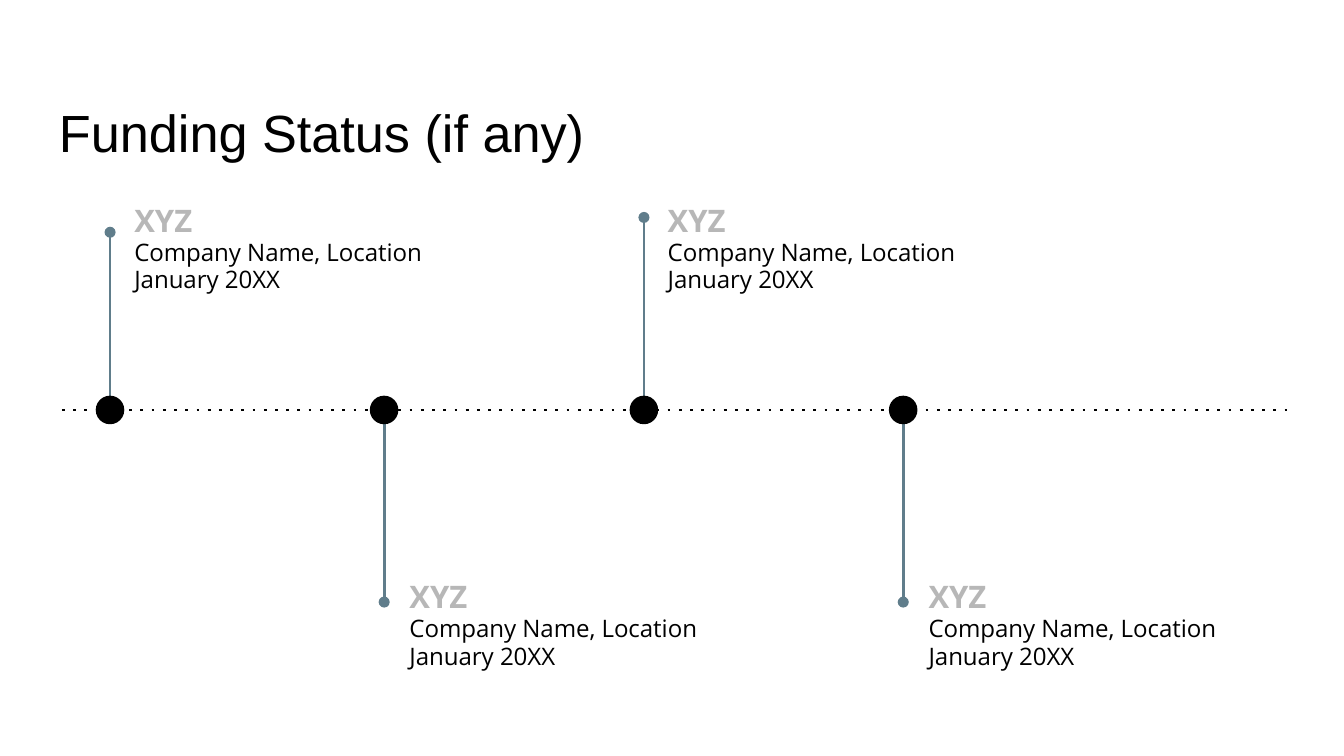
"""Build a funding status slide with milestones along a dotted timeline."""
from lxml import etree
from pptx import Presentation
from pptx import util as u
from pptx.dml.color import RGBColor
from pptx.enum import shapes, text
from pptx.oxml import ns


def paint(color_format, hex_color):
    color_format.rgb = RGBColor.from_string(hex_color)


def draw_line(x1, y1, x2, y2, hex_color, ending, **settings):
    line = slide.shapes.add_connector(
        shapes.MSO_CONNECTOR.STRAIGHT, u.Cm(x1), u.Cm(y1), u.Cm(x2), u.Cm(y2))
    line.line.width = u.Pt(1.5)
    paint(line.line.color, hex_color)
    properties = line._element.spPr
    etree.SubElement(properties.find(ns.qn("a:ln")), ns.qn(ending), **settings)
    etree.SubElement(properties, ns.qn("a:effectLst"))


deck = Presentation()
deck.slide_width, deck.slide_height = u.Cm(25.4), u.Cm(14.29)
slide = deck.slides.add_slide(deck.slide_layouts[5])

heading = slide.shapes.title
heading.left, heading.top = u.Cm(0.86), u.Cm(0.89)
heading.width, heading.height = u.Cm(12.19), u.Cm(2.31)
heading.text_frame.text = "Funding Status (if any)"
heading.text_frame.vertical_anchor = text.MSO_ANCHOR.BOTTOM
heading_line = heading.text_frame.paragraphs[0]
heading_line.alignment = text.PP_ALIGN.LEFT
heading_font = heading_line.runs[0].font
heading_font.name, heading_font.size = "Arial", u.Pt(28)
paint(heading_font.color, "000000")

axis_y = 7.75
dot_size = 0.54
draw_line(1.17, axis_y, 24.33, axis_y, "000000", "a:prstDash", val="dot")

milestones = [
    (2.08, 4.39, 2.29, 3.61),
    (7.26, 11.38, 7.49, 10.72),
    (12.17, 4.11, 12.37, 3.61),
    (17.07, 11.38, 17.3, 10.72),
]
details = [
    ("XYZ", 16.6, "B7B7B7", True, 0),
    ("Company Name, Location", 12.9, "000000", False, 0),
    ("January 20XX", 12.9, "000000", False, 12),
]

for x, stem_end, label_left, label_top in milestones:
    draw_line(x, axis_y, x, stem_end, "607D8B", "a:tailEnd", type="oval")

    dot = slide.shapes.add_shape(
        shapes.MSO_SHAPE.OVAL, u.Cm(x - dot_size / 2), u.Cm(axis_y - dot_size / 2),
        u.Cm(dot_size), u.Cm(dot_size))
    dot.shadow.inherit = False
    dot.fill.solid()
    paint(dot.fill.fore_color, "000000")
    dot.line.fill.background()

    label = slide.shapes.add_textbox(
        u.Cm(label_left), u.Cm(label_top), u.Cm(7.39), u.Cm(2.69)).text_frame
    label.word_wrap = True
    label.margin_left = label.margin_right = u.Cm(0.25)
    label.margin_top = label.margin_bottom = u.Cm(0.25)
    label.text = "\n".join(detail[0] for detail in details)
    for paragraph, (_, size, color, bold, gap) in zip(label.paragraphs, details):
        paragraph.line_spacing = 0.95
        paragraph.space_after = u.Pt(gap)
        font = paragraph.runs[0].font
        font.name, font.size, font.bold = "Open Sans", u.Pt(size), bold
        paint(font.color, color)

deck.save("out.pptx")
